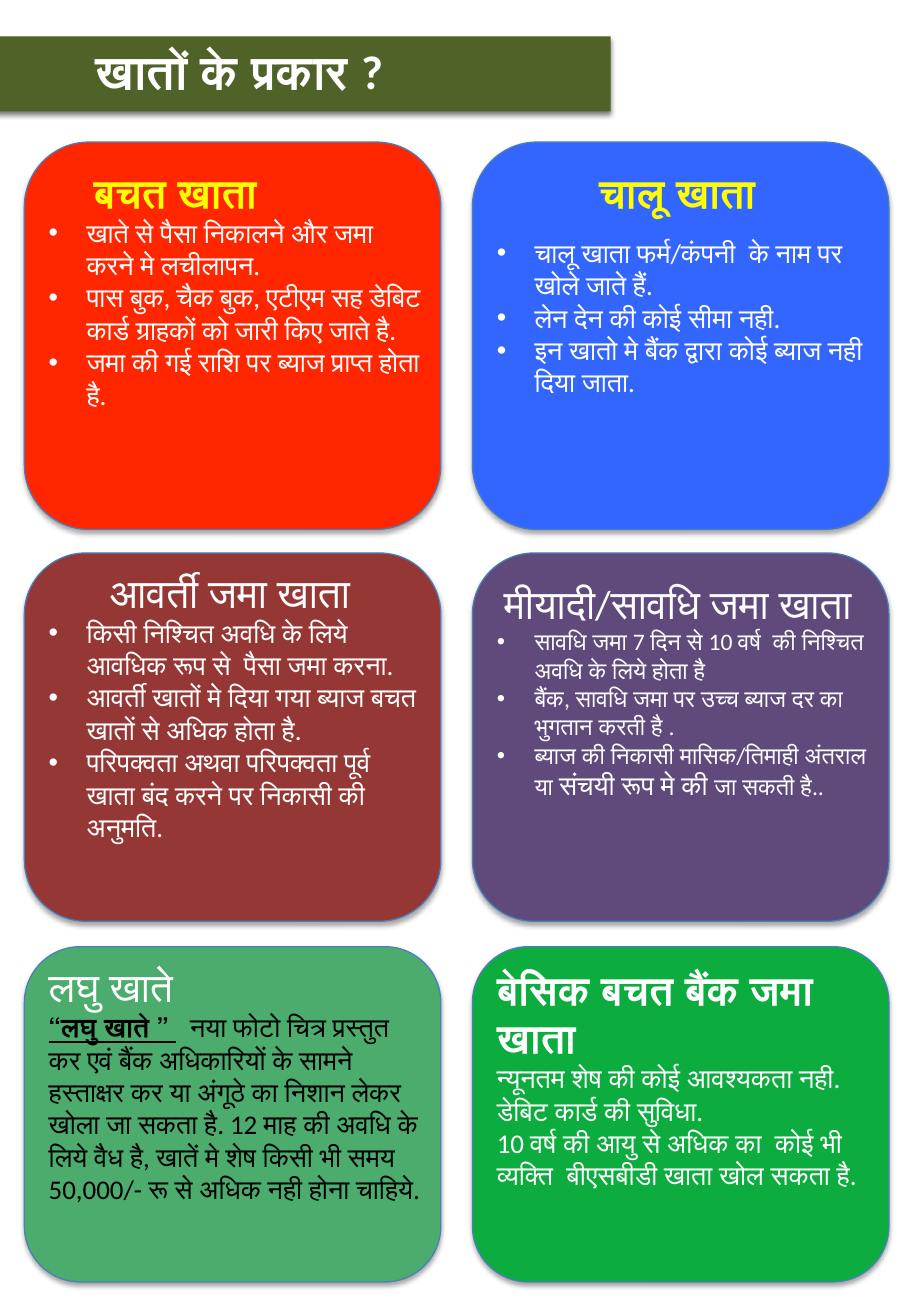
"""Builds a one-page Hindi overview of six bank account types."""
from dataclasses import dataclass

from lxml.etree import SubElement
from pptx import Presentation
from pptx.dml.color import RGBColor
from pptx.enum.shapes import MSO_SHAPE
from pptx.enum.text import MSO_AUTO_SIZE, PP_ALIGN
from pptx.oxml.ns import qn
from pptx.util import Cm, Pt

COLORS = {
    "olive": "4F6228", "red": "FF2600", "blue": "3366FF", "maroon": "953735",
    "purple": "604A7B", "mint": "4BAC6D", "green": "0DAC3F", "edge": "4B7EBC",
    "white": "FFFFFF", "yellow": "FFFF00", "black": "000000",
}
LEFTS = (0.51, 9.88)
ROWS = ((2.97, 8.1), (11.56, 7.7), (19.79, 7.01))
WIDTH = 8.71
HANG = 0.79


@dataclass
class Run:
    text: str
    size: int = 16
    color: str = "white"
    bold: bool = False
    under: bool = False


@dataclass
class Para:
    runs: list[Run]
    bullet: bool = False
    center: bool = False
    indent: float = 0
    before: int = 0


@dataclass
class Card:
    fill: str
    drop: float
    height: float
    paras: list[Para]


def head(text: str, color: str = "white", bold: bool = False,
         center: bool = False, indent: float = 0) -> Para:
    return Para([Run(text, 24, color, bold)], center=center, indent=indent)


def point(text: str, size: int = 16, before: int = 0) -> Para:
    return Para([Run(text, size)], bullet=True, before=before)


def plain(text: str) -> Para:
    return Para([Run(text)])


def paint(color: str) -> RGBColor:
    return RGBColor.from_string(COLORS[color])


def add_panel(slide, kind, box: tuple, fill: str, edge: bool,
              blur: float, dist: float, alpha: int) -> None:
    panel = slide.shapes.add_shape(kind, *map(Cm, box))
    panel.fill.solid()
    panel.fill.fore_color.rgb = paint(fill)
    if edge:
        panel.line.color.rgb = paint("edge")
        panel.line.width = Pt(0.75)
    else:
        panel.line.fill.background()
    panel.shadow.inherit = False
    effects = panel._element.spPr.find(qn("a:effectLst"))
    shade = SubElement(effects, qn("a:outerShdw"), blurRad=str(Pt(blur)),
                       dist=str(Pt(dist)), dir="5400000", rotWithShape="0")
    tint = SubElement(shade, qn("a:srgbClr"), val=COLORS["black"])
    SubElement(tint, qn("a:alpha"), val=str(alpha * 1000))


def add_para(para, item: Para) -> None:
    props = para._p.get_or_add_pPr()
    if item.bullet:
        props.set("marL", str(Cm(HANG)))
        props.set("indent", str(-Cm(HANG)))
        SubElement(props, qn("a:buFont"), typeface="Arial")
        SubElement(props, qn("a:buChar"), char="•")
    elif item.indent:
        props.set("marL", str(Cm(item.indent)))
    if item.center:
        para.alignment = PP_ALIGN.CENTER
    if item.before:
        para.space_before = Pt(item.before)
    for part in item.runs:
        run = para.add_run()
        run.text = part.text
        font = run.font
        font.name = "Calibri"
        font.size = Pt(part.size)
        font.bold = part.bold
        font.underline = part.under
        font.color.rgb = paint(part.color)


def add_text(slide, box: tuple, paras: list[Para], wrap: bool = True) -> None:
    frame = slide.shapes.add_textbox(*map(Cm, box)).text_frame
    frame.word_wrap = wrap
    frame.auto_size = MSO_AUTO_SIZE.SHAPE_TO_FIT_TEXT
    for num, item in enumerate(paras):
        add_para(frame.add_paragraph() if num else frame.paragraphs[0], item)


CARDS = [
    Card("red", 0.41, 6.07, [
        head("बचत खाता", "yellow", True, indent=0.94),
        point("खाते से पैसा निकालने और जमा करने मे लचीलापन."),
        point("पास बुक, चैक बुक, एटीएम सह डेबिट कार्ड ग्राहकों को जारी किए जाते है."),
        point("जमा की गई राशि पर ब्याज प्राप्त होता है."),
    ]),
    Card("blue", 0.41, 5.13, [
        head("चालू खाता ", "yellow", True, center=True),
        point("चालू खाता फर्म/कंपनी  के नाम पर खोले जाते हैं.", before=12),
        point("लेन देन की कोई सीमा नही."),
        point("इन खातो मे बैंक द्वारा कोई ब्याज नही दिया जाता."),
    ]),
    Card("maroon", 0.18, 7.44, [
        head("आवर्ती जमा खाता ", center=True),
        point("किसी निश्चित अवधि के लिये आवधिक रूप से  पैसा जमा करना."),
        point("आवर्ती खातों मे दिया गया ब्याज बचत खातों से अधिक होता है."),
        point("परिपक्वता अथवा परिपक्वता पूर्व खाता बंद करने पर निकासी की अनुमति."),
    ]),
    Card("purple", 0.41, 7.26, [
        head("मीयादी/सावधि जमा खाता ", center=True),
        point("सावधि जमा 7 दिन से 10 वर्ष  की निश्चित अवधि के लिये होता है", 14),
        point("बैंक, सावधि जमा पर उच्च ब्याज दर का भुगतान करती है .", 14),
        Para([Run("ब्याज की निकासी मासिक/तिमाही अंतराल या ", 14),
              Run("संचयी रूप मे की "), Run("जा सकती है..", 14)], bullet=True),
    ]),
    Card("mint", 0.2, 6.76, [
        head("लघु खाते"),
        Para([Run("“लघु खाते ” ", color="black", bold=True, under=True),
              Run("  नया फोटो चित्र प्रस्तुत कर एवं बैंक अधिकारियों के सामने "
                  "हस्ताक्षर कर या अंगूठे का निशान लेकर खोला जा सकता है. "
                  "12 माह की अवधि के लिये वैध है, खातें मे शेष किसी भी समय "
                  "50,000/- रू से अधिक नही होना चाहिये.", color="black")]),
    ]),
    Card("green", 0.25, 6.4, [
        head("बेसिक बचत बैंक जमा खाता", bold=True),
        plain("न्यूनतम शेष की कोई आवश्यकता नही."),
        plain("डेबिट कार्ड की सुविधा."),
        plain("10 वर्ष की आयु से अधिक का  कोई भी व्यक्ति  बीएसबीडी खाता खोल सकता है."),
    ]),
]


def main() -> None:
    deck = Presentation()
    deck.slide_width, deck.slide_height = Cm(19.05), Cm(27.51)
    slide = deck.slides.add_slide(deck.slide_layouts[6])
    add_panel(slide, MSO_SHAPE.RECTANGLE, (-0.18, 0.76, 12.95, 1.57),
              "olive", False, 3, 2, 50)
    add_text(slide, (1.75, 0.76, 7.37, 1.45),
             [Para([Run("खातों के प्रकार ?", 28, bold=True)])], wrap=False)
    for num, card in enumerate(CARDS):
        left = LEFTS[num % 2]
        top, height = ROWS[num // 2]
        add_panel(slide, MSO_SHAPE.ROUNDED_RECTANGLE,
                  (left, top, WIDTH, height), card.fill, True, 3.1, 1.8, 35)
        add_text(slide, (left + 0.26, top + card.drop, 8.28, card.height),
                 card.paras)
    deck.save("out.pptx")


if __name__ == "__main__":
    main()
